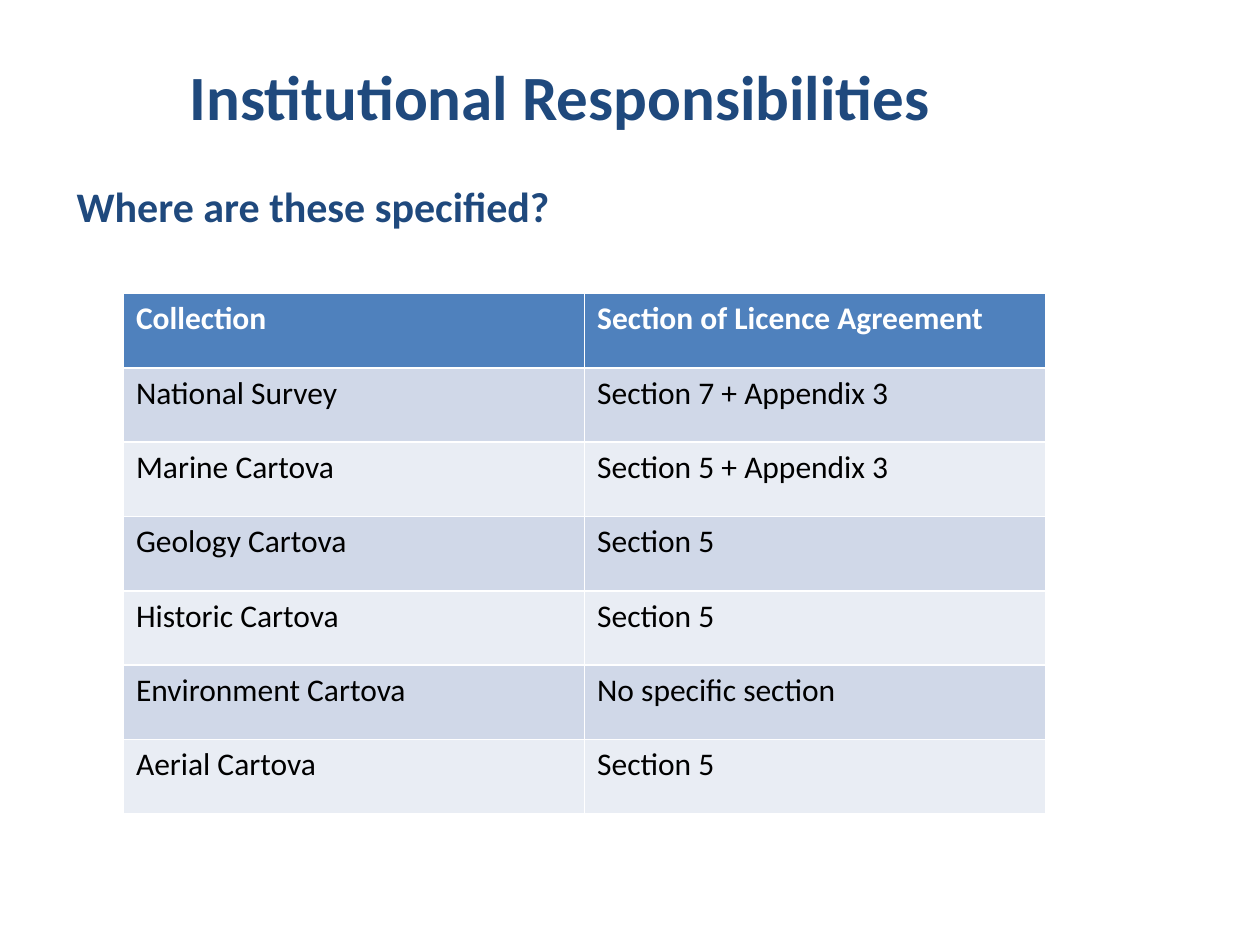
"""Build the slide on where institutional responsibilities are specified."""
from pptx import Presentation
from pptx.dml.color import RGBColor as Rgb
from pptx.enum.text import MSO_ANCHOR as Anchor, PP_ALIGN as Align
from pptx.util import Inches, Pt

THEME = {
    "font": "Calibri",
    "title": {"size": Pt(36), "bold": True, "color": "1F497D"},
    "lead": {"size": Pt(24), "bold": True, "color": "1F497D"},
    "head": {"size": Pt(18), "bold": True, "color": "FFFFFF"},
    "cell": {"size": Pt(18), "bold": False, "color": "000000"},
    "fill": "4F81BD",
    "bands": ("D0D8E8", "E9EDF4"),
}
TEXTS = [
    ("Institutional Responsibilities", "title", (0.51, 0.13, 7.87, 1.25),
     Align.CENTER, Anchor.MIDDLE),
    ("Where are these specified?", "lead", (0.51, 1.38, 9, 0.6),
     Align.LEFT, Anchor.TOP),
]
ROWS = [
    ("Collection", "Section of Licence Agreement"),
    ("National Survey", "Section 7 + Appendix 3"),
    ("Marine Cartova", "Section 5 + Appendix 3"),
    ("Geology Cartova", "Section 5"),
    ("Historic Cartova", "Section 5"),
    ("Environment Cartova", "No specific section"),
    ("Aerial Cartova", "Section 5"),
]
GRID = (0.98, 2.33, 7.32, 4.13)


def write(frame, text, style, align=Align.LEFT):
    para = frame.paragraphs[0]
    para.alignment = align
    run = para.add_run()
    run.text = text
    run.font.name = THEME["font"]
    for key, value in THEME[style].items():
        if key == "color":
            run.font.color.rgb = Rgb.from_string(value)
        else:
            setattr(run.font, key, value)


def add_text(slide, text, style, area, align, anchor):
    frame = slide.shapes.add_textbox(*map(Inches, area)).text_frame
    frame.word_wrap = True
    frame.vertical_anchor = anchor
    write(frame, text, style, align)


def add_grid(slide):
    area = map(Inches, GRID)
    table = slide.shapes.add_table(len(ROWS), len(ROWS[0]), *area).table
    for r, row in enumerate(ROWS):
        style = "cell" if r else "head"
        fill = THEME["bands"][(r - 1) % 2] if r else THEME["fill"]
        for c, text in enumerate(row):
            cell = table.cell(r, c)
            cell.fill.solid()
            cell.fill.fore_color.rgb = Rgb.from_string(fill)
            write(cell.text_frame, text, style)


def main():
    deck = Presentation()
    deck.slide_width, deck.slide_height = Inches(10), Inches(7.5)
    slide = deck.slides.add_slide(deck.slide_layouts[6])
    for item in TEXTS:
        add_text(slide, *item)
    add_grid(slide)
    deck.save("out.pptx")


if __name__ == "__main__":
    main()
